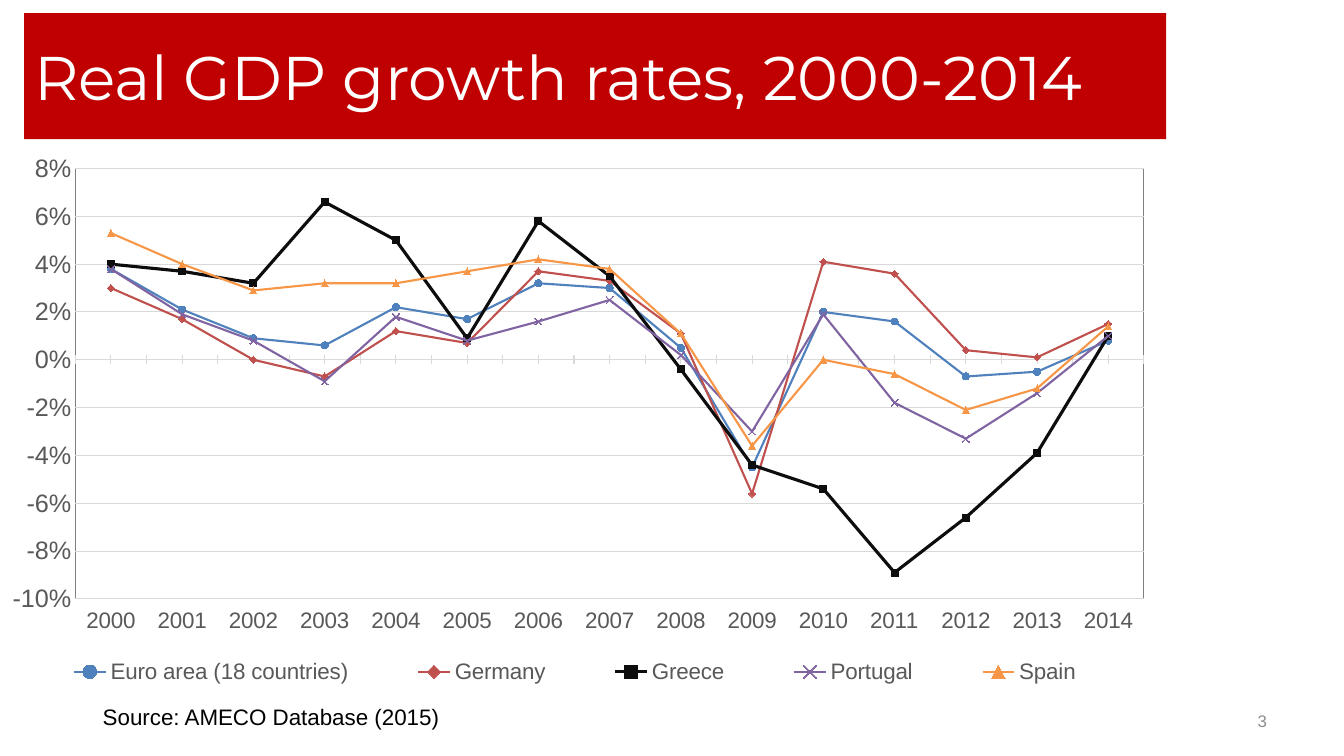
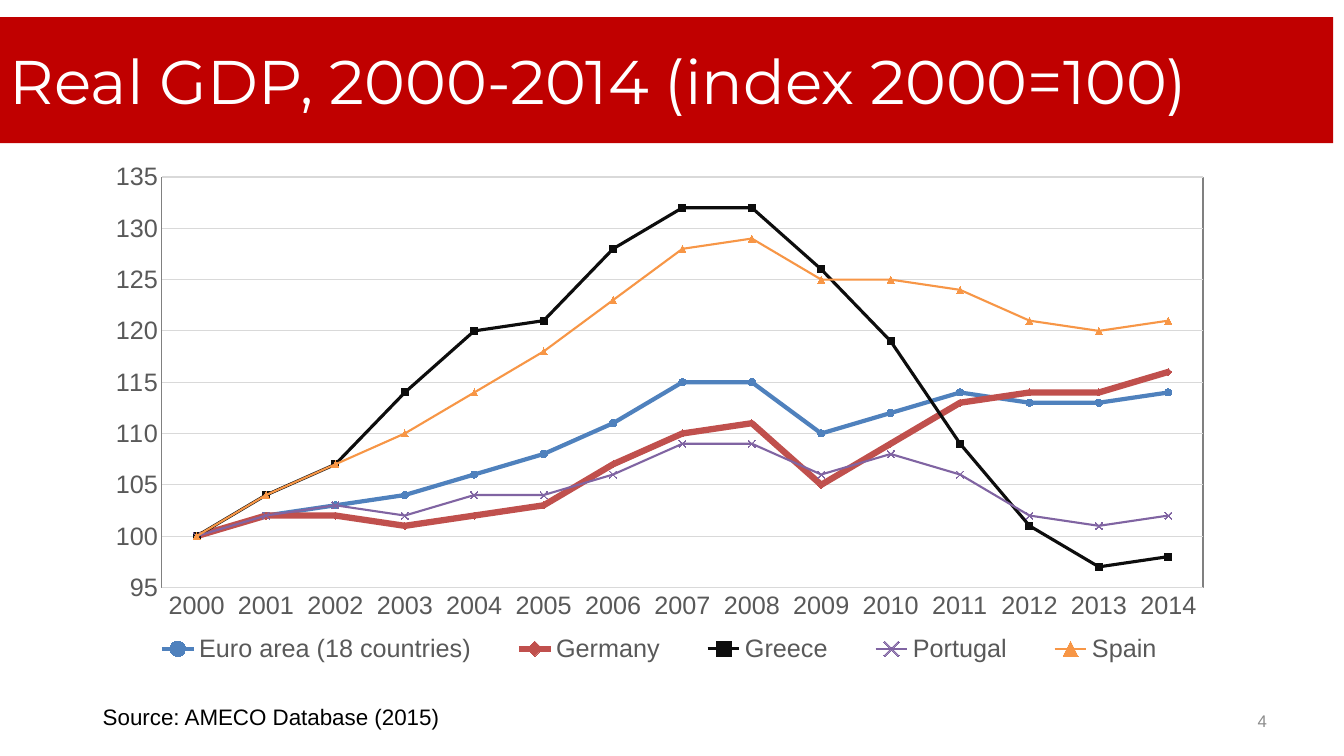
"""Build two slides that chart real GDP growth and real GDP levels."""
from lxml import etree
from pptx import Presentation
from pptx.chart.data import CategoryChartData
from pptx.dml.color import RGBColor
from pptx.enum.chart import (XL_CHART_TYPE, XL_LEGEND_POSITION, XL_MARKER_STYLE,
                             XL_TICK_LABEL_POSITION, XL_TICK_MARK)
from pptx.enum.shapes import MSO_SHAPE
from pptx.enum.text import MSO_ANCHOR, PP_ALIGN
from pptx.oxml.ns import qn
from pptx.util import Cm, Pt

LINE = XL_CHART_TYPE.LINE_MARKERS
BOTTOM = XL_LEGEND_POSITION.BOTTOM
MARK = XL_MARKER_STYLE
LOW, NEXT = XL_TICK_LABEL_POSITION.LOW, XL_TICK_LABEL_POSITION.NEXT_TO_AXIS
NONE, CROSS = XL_TICK_MARK.NONE, XL_TICK_MARK.CROSS
RECT = MSO_SHAPE.RECTANGLE
TOP, MIDDLE = MSO_ANCHOR.TOP, MSO_ANCHOR.MIDDLE
LEFT, RIGHT = PP_ALIGN.LEFT, PP_ALIGN.RIGHT

THEME = {
    "band": "C00000", "grid": "D9D9D9", "frame": "808080",
    "title": {"name": "Montserrat", "size": 44, "color": "FFFFFF"},
    "source": {"name": "Arial", "size": 16, "color": "000000"},
    "number": {"name": "Arial", "size": 12, "color": "8C8C8C"},
    "label": {"name": "Arial", "color": "595959"},
}

SOURCE = "Source: AMECO Database (2015)"
YEARS = [str(year) for year in range(2000, 2015)]
LANDS = [
    ("Euro area (18 countries)", "4F81BD", MARK.CIRCLE),
    ("Germany", "C0504D", MARK.DIAMOND),
    ("Greece", "0D0D0D", MARK.SQUARE),
    ("Portugal", "8064A2", MARK.X),
    ("Spain", "F79646", MARK.TRIANGLE),
]

SLIDES = [
    {
        "title": "Real GDP growth rates, 2000-2014", "number": "3",
        "band": (0.61, 0.33, 28.78, 3.18),
        "chart": (0, 3.89, 29.21, 13.51),
        "plot": (6.5, 2.5, 92.2, 80.4), "legend": (1, 93, 97.2, 7),
        "small": 16, "format": "0%", "labels": LOW, "minor": CROSS,
        "scale": {"minimum_scale": -0.1, "maximum_scale": 0.08, "major_unit": 0.02},
        "widths": [1.5, 1.5, 2.25, 1.5, 1.5],
        "values": [
            [0.038, 0.021, 0.009, 0.006, 0.022, 0.017, 0.032, 0.03,
             0.005, -0.045, 0.02, 0.016, -0.007, -0.005, 0.008],
            [0.03, 0.017, 0, -0.007, 0.012, 0.007, 0.037, 0.033,
             0.011, -0.056, 0.041, 0.036, 0.004, 0.001, 0.015],
            [0.04, 0.037, 0.032, 0.066, 0.05, 0.009, 0.058, 0.035,
             -0.004, -0.044, -0.054, -0.089, -0.066, -0.039, 0.01],
            [0.038, 0.019, 0.008, -0.009, 0.018, 0.008, 0.016, 0.025,
             0.002, -0.03, 0.019, -0.018, -0.033, -0.014, 0.01],
            [0.053, 0.04, 0.029, 0.032, 0.032, 0.037, 0.042, 0.038,
             0.011, -0.036, 0, -0.006, -0.021, -0.012, 0.014],
        ],
    },
    {
        "title": "Real GDP, 2000-2014 (index 2000=100)", "number": "4",
        "band": (0, 0.43, 33.6, 3.18),
        "chart": (2.34, 3.84, 28.55, 13.21),
        "plot": (6.1, 4.7, 91.9, 78.3), "legend": (2.6, 90.7, 94.8, 8),
        "small": 18, "format": "General", "labels": NEXT, "minor": NONE,
        "scale": {"minimum_scale": 95, "maximum_scale": 135, "major_unit": 5},
        "widths": [3, 4.5, 2.25, 1.5, 1.5],
        "values": [
            [100, 102, 103, 104, 106, 108, 111, 115, 115, 110, 112, 114, 113, 113, 114],
            [100, 102, 102, 101, 102, 103, 107, 110, 111, 105, 109, 113, 114, 114, 116],
            [100, 104, 107, 114, 120, 121, 128, 132, 132, 126, 119, 109, 101, 97, 98],
            [100, 102, 103, 102, 104, 104, 106, 109, 109, 106, 108, 106, 102, 101, 102],
            [100, 104, 107, 110, 114, 118, 123, 128, 129, 125, 125, 124, 121, 120, 121],
        ],
    },
]


def apply(target, **values):
    """Set each named attribute on the target."""
    for name, value in values.items():
        setattr(target, name, value)


def style(font, name, size, color):
    """Give a font its face, size and colour."""
    apply(font, name=name, size=Pt(size), bold=False)
    font.color.rgb = RGBColor.from_string(color)


def stroke(line, color, width):
    """Draw a line in one colour and width."""
    line.color.rgb = RGBColor.from_string(color)
    line.width = Pt(width)


def write(shape, text, look, anchor=TOP, align=LEFT):
    """Put one line of themed text in a shape."""
    frame = shape.text_frame
    apply(frame, word_wrap=True, vertical_anchor=anchor)
    para = frame.paragraphs[0]
    para.alignment = align
    run = para.add_run()
    run.text = text
    style(run.font, **THEME[look])


def place(part, index, box, **extra):
    """Fix a chart part at a box given in percent of the chart."""
    for old in part.findall(qn("c:layout")):
        part.remove(old)
    layout = etree.Element(qn("c:layout"))
    part.insert(index, layout)
    manual = etree.SubElement(layout, qn("c:manualLayout"))
    sides = {side: round(share / 100, 3) for side, share in zip("xywh", box)}
    for name, value in {**extra, "xMode": "edge", "yMode": "edge", **sides}.items():
        etree.SubElement(manual, qn("c:" + name)).set("val", str(value))


def frame(area):
    """Outline the plot area."""
    look = etree.SubElement(area, qn("c:spPr"))
    etree.SubElement(look, qn("a:noFill"))
    line = etree.SubElement(look, qn("a:ln"), w=str(Pt(0.75)))
    fill = etree.SubElement(line, qn("a:solidFill"))
    etree.SubElement(fill, qn("a:srgbClr"), val=THEME["frame"])


def draw(slide, item):
    """Add the line chart of one slide."""
    data = CategoryChartData(number_format=item["format"])
    data.categories = YEARS
    for (name, _, _), values in zip(LANDS, item["values"]):
        data.add_series(name, values)
    chart = slide.shapes.add_chart(LINE, *map(Cm, item["chart"]), data).chart
    apply(chart, has_title=False, has_legend=True)
    apply(chart.legend, position=BOTTOM, include_in_layout=False)
    chart.plots[0].vary_by_categories = False
    cats, vals = chart.category_axis, chart.value_axis
    apply(cats, major_tick_mark=NONE, minor_tick_mark=item["minor"],
          tick_label_position=item["labels"], has_major_gridlines=False)
    apply(vals, major_tick_mark=NONE, minor_tick_mark=NONE,
          has_major_gridlines=True, **item["scale"])
    apply(vals.tick_labels, number_format=item["format"], number_format_is_linked=False)
    fonts = [(chart.font, item["small"]), (chart.legend.font, item["small"]),
             (cats.tick_labels.font, item["small"]), (vals.tick_labels.font, 18)]
    for font, size in fonts:
        style(font, size=size, **THEME["label"])
    stroke(cats.format.line, THEME["grid"], 0.75)
    stroke(vals.major_gridlines.format.line, THEME["grid"], 0.75)
    vals.format.line.fill.background()
    for row, (_, color, mark), width in zip(chart.plots[0].series, LANDS, item["widths"]):
        row.smooth = False
        stroke(row.format.line, color, width)
        apply(row.marker, style=mark, size=5)
        stroke(row.marker.format.line, color, 0.75)
        fill = row.marker.format.fill
        if mark == MARK.X:
            fill.background()
        else:
            fill.solid()
            fill.fore_color.rgb = RGBColor.from_string(color)
    root = chart._chartSpace.chart
    place(root.plotArea, 0, item["plot"], layoutTarget="inner")
    place(root.find(qn("c:legend")), 1, item["legend"])
    frame(root.plotArea)


def build(deck, item):
    """Add one slide with its band, chart and footer."""
    slide = deck.slides.add_slide(deck.slide_layouts[6])
    shapes = slide.shapes
    band = shapes.add_shape(RECT, *map(Cm, item["band"]))
    band.shadow.inherit = False
    band.fill.solid()
    band.fill.fore_color.rgb = RGBColor.from_string(THEME["band"])
    band.line.fill.background()
    write(band, item["title"], "title", MIDDLE)
    draw(slide, item)
    source = shapes.add_textbox(*map(Cm, (2.34, 17.6, 29.21, 0.94)))
    write(source, SOURCE, "source")
    number = shapes.add_textbox(*map(Cm, (24.28, 17.65, 7.9, 1.02)))
    write(number, item["number"], "number", MIDDLE, RIGHT)


def main():
    """Build the deck and save it."""
    deck = Presentation()
    apply(deck, slide_width=Cm(33.87), slide_height=Cm(19.05))
    for item in SLIDES:
        build(deck, item)
    deck.save("out.pptx")


if __name__ == "__main__":
    main()
